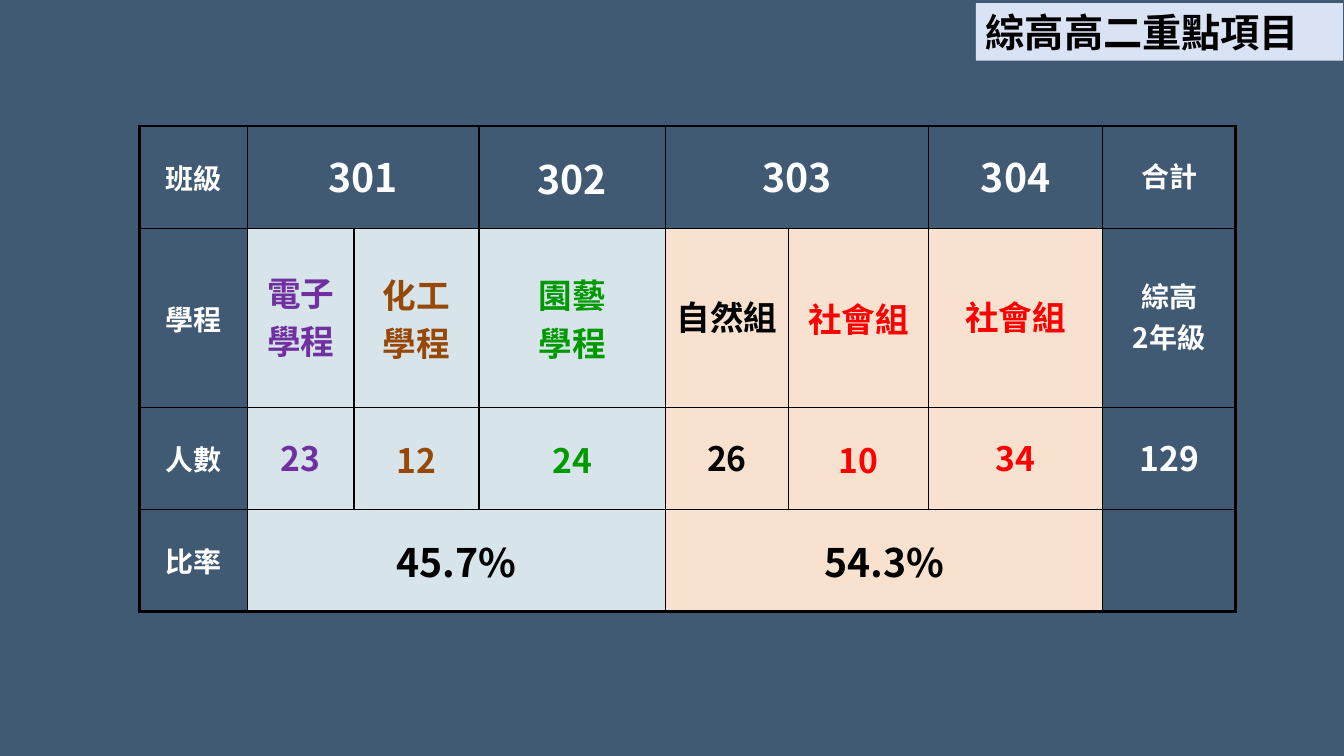
from dataclasses import dataclass

from lxml import etree
from pptx import Presentation
from pptx.dml.color import RGBColor
from pptx.enum import text as t
from pptx.oxml import ns
from pptx.util import Cm, Pt

NAVY, WHITE, BLACK = "405A74", "FFFFFF", "000000"
PALE_BLUE, PEACH, LAVENDER = "D7E5EB", "F8E2CF", "DAE3F3"
PURPLE, BROWN, GREEN, RED = "7030A0", "974806", "009900", "FF0000"
TABLE_FONT, TITLE_FONT = "Noto Sans CJK TC", "Noto Sans CJK SC"

COLUMN_WIDTHS = [2.72, 2.69, 3.15, 4.7, 3.1, 3.53, 4.39, 3.35]
ROW_HEIGHTS = [2.57, 4.52, 2.57, 2.57]
PADDED_COLUMNS = {0, 2, 3, 5}


@dataclass
class Entry:
    row: int
    column: int
    words: str
    size: int
    color: str = WHITE
    fill: str = ""
    span: int = 1


@dataclass
class Track:
    """One study programme: its name, head count and colours."""
    name: str
    students: int
    color: str
    fill: str


TRACKS = [
    Track("電子\n學程", 23, PURPLE, PALE_BLUE),
    Track("化工\n學程", 12, BROWN, PALE_BLUE),
    Track("園藝\n學程", 24, GREEN, PALE_BLUE),
    Track("自然組", 26, BLACK, PEACH),
    Track("社會組", 10, RED, PEACH),
    Track("社會組", 34, RED, PEACH),
]

ENTRIES = [Entry(row, 0, label, 20) for row, label in enumerate(["班級", "學程", "人數", "比率"])]
ENTRIES += [
    Entry(0, 1, "301", 28, span=2),
    Entry(0, 3, "302", 28),
    Entry(0, 4, "303", 28, span=2),
    Entry(0, 6, "304", 28),
    Entry(0, 7, "合計", 20),
    Entry(1, 7, "綜高\n2年級", 20),
    Entry(2, 7, "129", 24),
    Entry(3, 1, "45.7%", 28, BLACK, PALE_BLUE, 3),
    Entry(3, 4, "54.3%", 28, BLACK, PEACH, 3),
]
for number, track in enumerate(TRACKS, start=1):
    ENTRIES.append(Entry(1, number, track.name, 24, track.color, track.fill))
    ENTRIES.append(Entry(2, number, str(track.students), 24, track.color, track.fill))


def rgb(color: str) -> RGBColor:
    return RGBColor.from_string(color)


def paint(fill, color: str) -> None:
    fill.solid()
    fill.fore_color.rgb = rgb(color)


def style_paragraph(paragraph, size: int, color: str, typeface: str, alignment) -> None:
    """Format a paragraph, with the typeface also set for East Asian letters."""
    paragraph.alignment = alignment
    font = paragraph.font
    font.size, font.bold, font.name = Pt(size), True, typeface
    font.color.rgb = rgb(color)
    properties = paragraph._p.pPr.find(ns.qn("a:defRPr"))
    etree.SubElement(properties, ns.qn("a:ea"), typeface=typeface)


def add_borders(cell, row: int, column: int) -> None:
    """Draw thin inner lines and a heavier frame around the table."""
    widths = {
        "L": 2.25 if column == 0 else 1,
        "R": 2.25 if column == len(COLUMN_WIDTHS) - 1 else 1,
        "T": 1.5 if row == 0 else 1,
        "B": 2.25 if row == len(ROW_HEIGHTS) - 1 else 1,
    }
    properties = cell._tc.get_or_add_tcPr()
    for side, width in widths.items():
        line = etree.SubElement(properties, ns.qn(f"a:ln{side}"), w=str(Pt(width)))
        solid = etree.SubElement(line, ns.qn("a:solidFill"))
        etree.SubElement(solid, ns.qn("a:srgbClr"), val=BLACK)


def fill_entry(table, entry: Entry) -> None:
    cell = table.cell(entry.row, entry.column)
    if entry.span > 1:
        cell.merge(table.cell(entry.row, entry.column + entry.span - 1))
    if entry.fill:
        paint(cell.fill, entry.fill)
    padded = entry.column in PADDED_COLUMNS or entry.row == len(ROW_HEIGHTS) - 1
    cell.margin_left = cell.margin_right = Cm(0.25 if padded else 0.03)
    cell.margin_top = Cm(0.13 if padded else 0.03)
    cell.margin_bottom = Cm(0.13)
    cell.vertical_anchor = t.MSO_ANCHOR.MIDDLE
    cell.text = entry.words
    for paragraph in cell.text_frame.paragraphs:
        style_paragraph(paragraph, entry.size, entry.color, TABLE_FONT, t.PP_ALIGN.CENTER)


def add_class_table(slide) -> None:
    table = slide.shapes.add_table(
        len(ROW_HEIGHTS), len(COLUMN_WIDTHS), Cm(3.51), Cm(3.18),
        Cm(sum(COLUMN_WIDTHS)), Cm(sum(ROW_HEIGHTS))).table
    table.first_row = table.horz_banding = False
    for column, width in zip(table.columns, COLUMN_WIDTHS):
        column.width = Cm(width)
    for row, height in zip(table.rows, ROW_HEIGHTS):
        row.height = Cm(height)
    for row in range(len(ROW_HEIGHTS)):
        for column in range(len(COLUMN_WIDTHS)):
            cell = table.cell(row, column)
            add_borders(cell, row, column)
            cell.fill.background()
    for entry in ENTRIES:
        fill_entry(table, entry)


def add_title(slide, words: str) -> None:
    title = slide.shapes.title
    title.left, title.top, title.width, title.height = Cm(24.59), Cm(0.08), Cm(9.25), Cm(1.45)
    paint(title.fill, LAVENDER)
    frame = title.text_frame
    frame.text = words
    frame.auto_size = t.MSO_AUTO_SIZE.NONE
    frame.vertical_anchor = t.MSO_ANCHOR.MIDDLE
    style_paragraph(frame.paragraphs[0], 28, BLACK, TITLE_FONT, t.PP_ALIGN.LEFT)


def main() -> None:
    deck = Presentation()
    deck.slide_width, deck.slide_height = Cm(33.87), Cm(19.05)
    slide = deck.slides.add_slide(deck.slide_layouts[5])
    paint(slide.background.fill, NAVY)
    add_class_table(slide)
    add_title(slide, "綜高高二重點項目")
    deck.save("out.pptx")


if __name__ == "__main__":
    main()
